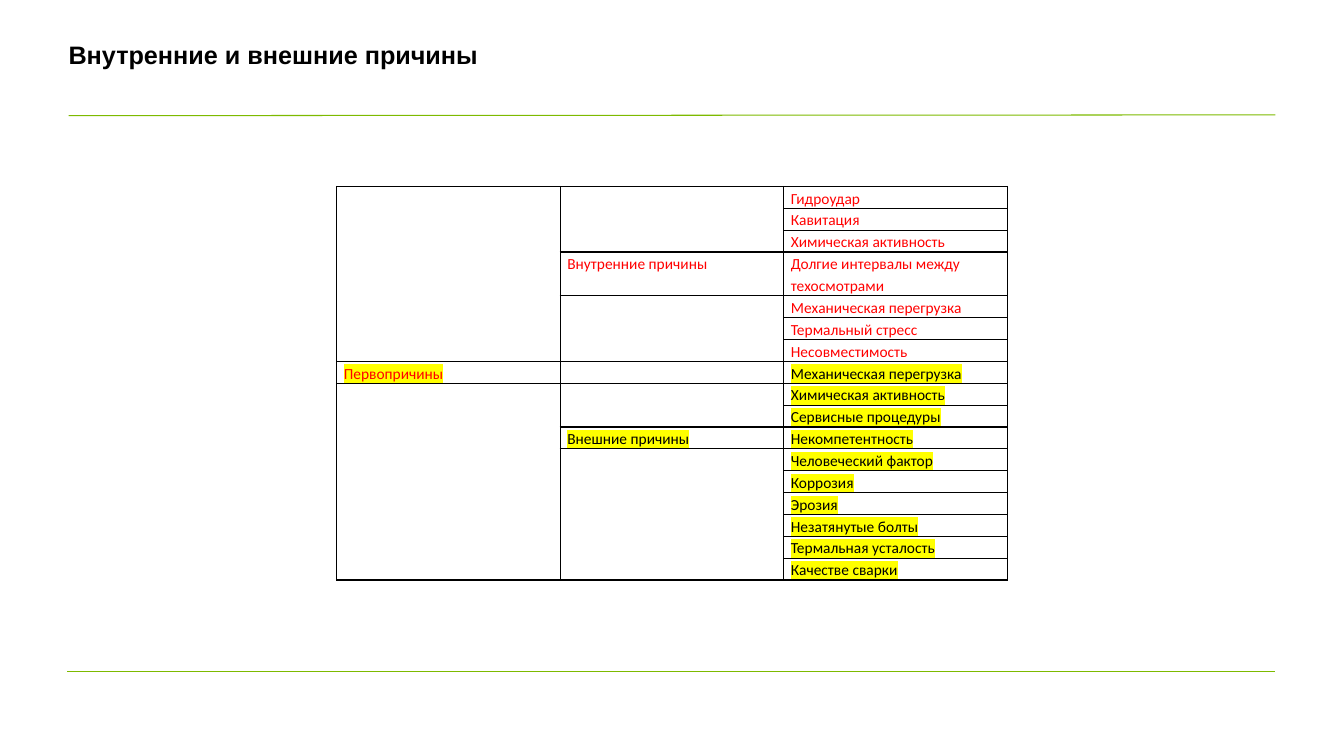
from typing import NamedTuple, Optional

from lxml.etree import SubElement
from pptx import Presentation
from pptx.dml.color import RGBColor
from pptx.enum.shapes import MSO_CONNECTOR as Connector
from pptx.enum.text import MSO_ANCHOR as Anchor, PP_ALIGN as Align
from pptx.oxml.ns import qn
from pptx.util import Inches, Pt

BLACK = RGBColor(0x00, 0x00, 0x00)
RED = RGBColor(0xFF, 0x00, 0x00)
YELLOW = RGBColor(0xFF, 0xFF, 0x00)
GREEN = RGBColor(0x7D, 0xBA, 0x00)

SLIDE_W, SLIDE_H = Inches(13.33), Inches(7.5)
COL_W, ROW_H = Inches(2.217), Inches(0.217)
TABLE_LEFT, TABLE_TOP = Inches(3.34), Inches(1.85)
CELL_SIZE = Pt(11)


class Cause(NamedTuple):
    text: str
    color: RGBColor = BLACK
    highlight: Optional[RGBColor] = YELLOW
    lines: int = 1


class Group(NamedTuple):
    col: int
    row: int
    rows: int = 1
    text: str = ""
    color: RGBColor = BLACK
    highlight: Optional[RGBColor] = YELLOW


class Rule(NamedTuple):
    x1: float
    y1: float
    x2: float
    y2: float


# Ends as shares of the slide's width and height
RULES = [
    Rule(0.05, 0.888, 0.949, 0.888),
    Rule(0.051, 0.153, 0.949, 0.152),
]

CAUSES = [
    Cause("Гидроудар", RED, None),
    Cause("Кавитация", RED, None),
    Cause("Химическая активность", RED, None),
    Cause("Долгие интервалы между техосмотрами", RED, None, lines=2),
    Cause("Механическая перегрузка", RED, None),
    Cause("Термальный стресс", RED, None),
    Cause("Несовместимость", RED, None),
    Cause("Механическая перегрузка"),
    Cause("Химическая активность"),
    Cause("Сервисные процедуры"),
    Cause("Некомпетентность"),
    Cause("Человеческий фактор"),
    Cause("Коррозия"),
    Cause("Эрозия"),
    Cause("Незатянутые болты"),
    Cause("Термальная усталость"),
    Cause("Качестве сварки"),
]

GROUPS = [
    Group(0, 0, 7),
    Group(0, 7, 1, "Первопричины", RED),
    Group(0, 8, 9),
    Group(1, 0, 3),
    Group(1, 3, 1, "Внутренние причины", RED, None),
    Group(1, 4, 3),
    Group(1, 8, 2),
    Group(1, 10, 1, "Внешние причины"),
    Group(1, 11, 6),
]


def write(tf, text: str, *, font: str = "Calibri", size=CELL_SIZE,
          color: RGBColor = BLACK, bold: bool = False, spacing: float = 1.15,
          highlight: Optional[RGBColor] = None) -> None:
    p = tf.paragraphs[0]
    p.alignment = Align.LEFT
    p.line_spacing = spacing
    r = p.add_run()
    r.text = text
    r.font.size, r.font.bold = size, bold
    r.font.color.rgb = color
    if highlight is not None:
        mark = SubElement(r.font._element, qn("a:highlight"))
        SubElement(mark, qn("a:srgbClr"), val=str(highlight))
    r.font.name = font


def format_cell(cell) -> None:
    """Give a cell its margins, thin black borders and no fill."""
    cell.margin_left = cell.margin_right = Inches(0.07)
    cell.margin_top = cell.margin_bottom = 0
    tc_pr = cell._tc.get_or_add_tcPr()
    for side in ("a:lnL", "a:lnR", "a:lnT", "a:lnB"):
        ln = SubElement(tc_pr, qn(side), w=str(Pt(1)))
        fill = SubElement(ln, qn("a:solidFill"))
        SubElement(fill, qn("a:srgbClr"), val=str(BLACK))
    cell.fill.background()


def keep_empty_cell_low(cell) -> None:
    """Size the empty paragraph so that it does not stretch its row."""
    p = cell.text_frame.paragraphs[0]
    SubElement(p._p, qn("a:endParaRPr"), sz=str(int(CELL_SIZE.pt * 100)))


def add_rule(s, rule: Rule) -> None:
    line = s.shapes.add_connector(
        Connector.STRAIGHT,
        int(SLIDE_W * rule.x1), int(SLIDE_H * rule.y1),
        int(SLIDE_W * rule.x2), int(SLIDE_H * rule.y2))
    line.line.color.rgb = GREEN
    line.line.width = Pt(0.75)
    SubElement(line._element.spPr, qn("a:effectLst"))


def add_title(s, text: str) -> None:
    sp = s.shapes.title
    sp.left, sp.top = int(SLIDE_W * 0.051), int(SLIDE_H * 0.048)
    sp.width, sp.height = int(SLIDE_W * 0.764), int(SLIDE_H * 0.095)
    tf = sp.text_frame
    tf.margin_left = tf.margin_right = tf.margin_top = tf.margin_bottom = 0
    tf.vertical_anchor = Anchor.TOP
    tf.word_wrap = True
    write(tf, text, font="Arial", size=Pt(18), bold=True, spacing=1.1)


def add_cause_table(s) -> None:
    height = ROW_H * sum(cause.lines for cause in CAUSES)
    table = s.shapes.add_table(len(CAUSES), 3, TABLE_LEFT, TABLE_TOP,
                               COL_W * 3, height).table
    table.first_row = table.horz_banding = False
    for col in table.columns:
        col.width = COL_W
    for cell in table.iter_cells():
        format_cell(cell)
    for i, cause in enumerate(CAUSES):
        table.rows[i].height = ROW_H * cause.lines
        write(table.cell(i, 2).text_frame, cause.text,
              color=cause.color, highlight=cause.highlight)
    for group in GROUPS:
        cell = table.cell(group.row, group.col)
        if group.rows > 1:
            cell.merge(table.cell(group.row + group.rows - 1, group.col))
        if group.text:
            write(cell.text_frame, group.text,
                  color=group.color, highlight=group.highlight)
    for cell in table.iter_cells():
        if not cell.text_frame.text:
            keep_empty_cell_low(cell)


def main() -> None:
    prs = Presentation()
    prs.slide_width, prs.slide_height = SLIDE_W, SLIDE_H
    s = prs.slides.add_slide(prs.slide_layouts.get_by_name("Title Only"))
    for rule in RULES:
        add_rule(s, rule)
    add_title(s, "Внутренние и внешние причины")
    add_cause_table(s)
    prs.save("out.pptx")


if __name__ == "__main__":
    main()
